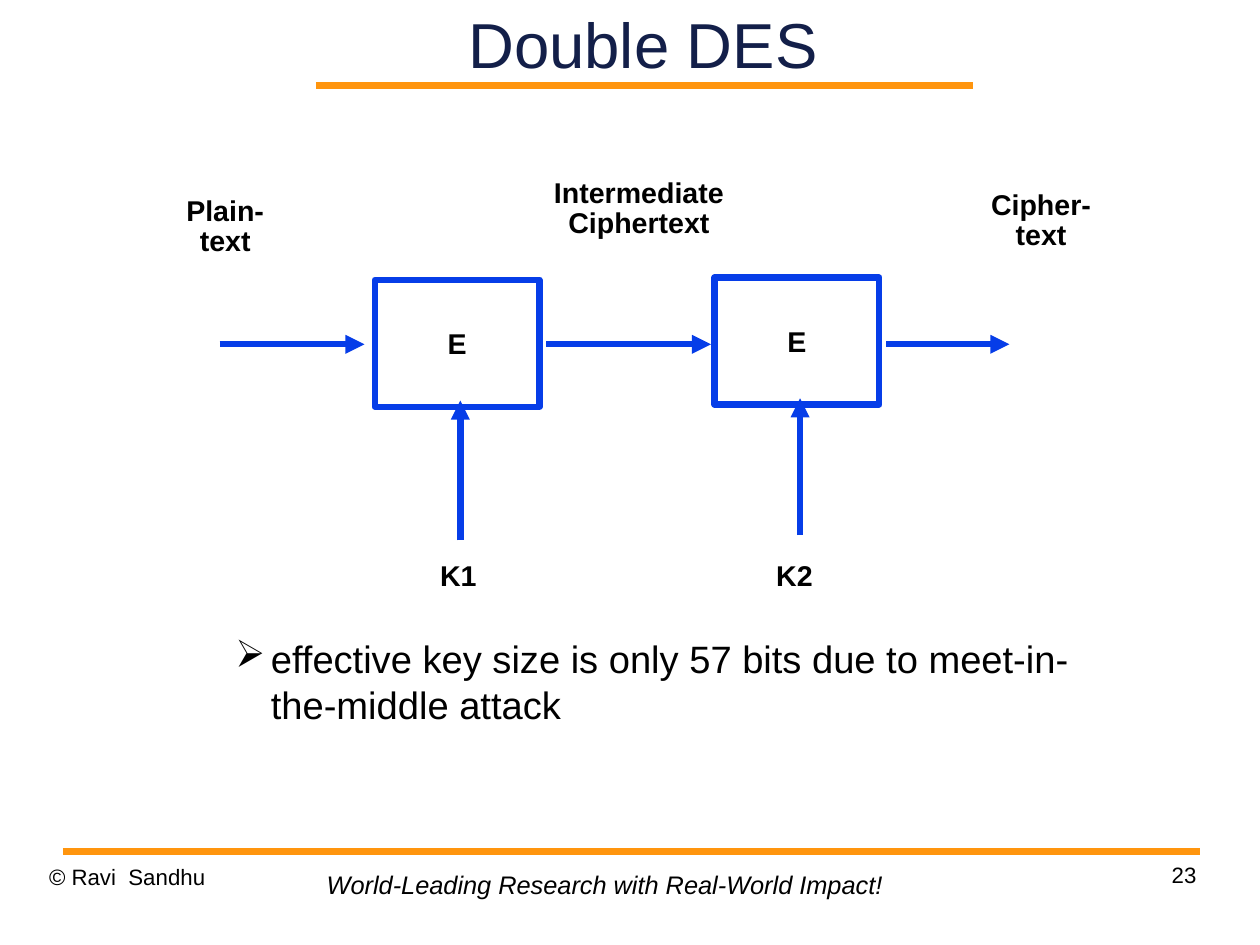
from lxml import etree
from pptx import Presentation
from pptx.dml.color import RGBColor
from pptx.enum.shapes import MSO_CONNECTOR, MSO_SHAPE
from pptx.enum.text import MSO_ANCHOR, MSO_AUTO_SIZE, PP_ALIGN
from pptx.oxml.ns import qn
from pptx.util import Cm, Pt

STRAIGHT = MSO_CONNECTOR.STRAIGHT
RECTANGLE = MSO_SHAPE.RECTANGLE
TOP, MIDDLE = MSO_ANCHOR.TOP, MSO_ANCHOR.MIDDLE
LEFT, CENTER, RIGHT = PP_ALIGN.LEFT, PP_ALIGN.CENTER, PP_ALIGN.RIGHT
FIXED, GROW = MSO_AUTO_SIZE.NONE, MSO_AUTO_SIZE.SHAPE_TO_FIT_TEXT

BLACK = RGBColor(0x00, 0x00, 0x00)
NAVY = RGBColor(0x13, 0x1F, 0x49)
BLUE = RGBColor(0x06, 0x3D, 0xE8)
ORANGE = RGBColor(0xFF, 0x95, 0x0E)

FONT = "Arial"
NO_INSETS = (0, 0, 0, 0)
BOX_INSETS = (0.25, 0.13, 0.25, 0.13)
LABEL_INSETS = (0.18, 0.08, 0.18, 0.08)
BOLD_LABEL = {"size": Pt(18), "bold": True}
LABEL_FRAME = {"insets": LABEL_INSETS, "wrap": False, "grow": GROW, "spacing": 0.87}

STAGE_WIDTH, STAGE_HEIGHT = 3.66, 2.82
STAGES = [
    {"left": 8.33, "top": 6.22, "key": "K1", "key_left": 9.6, "tail": 12.01},
    {"left": 15.88, "top": 6.17, "key": "K2", "key_left": 17.07, "tail": 11.89},
]
FLOW_TOP = 7.65
FLOWS = [(4.88, 8.1), (12.14, 15.8), (19.69, 22.43)]
LABELS = [
    (("Plain-", "text"), (3.66, 4.32, 2.69, 1.93)),
    (("Cipher-", "text"), (21.46, 4.19, 3.35, 1.93)),
    (("Intermediate", "Ciphertext"), (11.48, 3.91, 5.44, 1.93)),
]


def write_text(shape, lines, font, align=LEFT, anchor=TOP, insets=BOX_INSETS,
               wrap=True, grow=FIXED, spacing=None):
    """Fill a shape with one formatted paragraph per line."""
    frame = shape.text_frame
    margins = zip(("margin_left", "margin_top", "margin_right", "margin_bottom"), insets)
    layout = {name: Cm(length) for name, length in margins}
    layout.update(word_wrap=wrap, auto_size=grow, vertical_anchor=anchor)
    for name, value in layout.items():
        setattr(frame, name, value)
    frame.text = "\n".join(lines)
    color = font.get("color", BLACK)
    for paragraph in frame.paragraphs:
        paragraph.alignment = align
        paragraph.line_spacing = spacing
        for run in paragraph.runs:
            run.font.name = FONT
            run.font.color.rgb = color
            for name, value in font.items():
                if name != "color":
                    setattr(run.font, name, value)


def add_text(slide, box, lines, font, **layout):
    """Add a text box and return it."""
    shape = slide.shapes.add_textbox(*map(Cm, box))
    write_text(shape, lines, font, **layout)
    return shape


def add_line(slide, start, end, color, width, arrow=False):
    """Draw a straight line, with an arrowhead at its end if asked."""
    line = slide.shapes.add_connector(STRAIGHT, *map(Cm, start + end))
    line.line.color.rgb = color
    line.line.width = Pt(width)
    properties = line._element.spPr
    if arrow:
        outline = properties.find(qn("a:ln"))
        etree.SubElement(outline, qn("a:tailEnd"), type="triangle")
    etree.SubElement(properties, qn("a:effectLst"))


def add_title(slide, box):
    """Place the title and the rule below it."""
    left, top, width, height = box
    title = slide.shapes.title
    for name, value in zip(("left", "top", "width", "height"), box):
        setattr(title, name, Cm(value))
    write_text(title, ["Double DES"], {"size": Pt(40), "color": NAVY},
               align=CENTER, anchor=MIDDLE, insets=NO_INSETS)
    bottom = top + height
    add_line(slide, (left + 0.9, bottom), (left + width - 0.82, bottom), ORANGE, 4.31)


def add_stage(slide, stage):
    """Draw one encryption box with its key arrow and key label."""
    left, top = stage["left"], stage["top"]
    shape = slide.shapes.add_shape(
        RECTANGLE, Cm(left), Cm(top), Cm(STAGE_WIDTH), Cm(STAGE_HEIGHT))
    shape.shadow.inherit = False
    shape.fill.background()
    shape.line.color.rgb = BLUE
    shape.line.width = Pt(4)
    write_text(shape, ["E"], BOLD_LABEL, align=CENTER, anchor=MIDDLE, wrap=False)
    key_x = left + 1.9
    add_line(slide, (key_x, stage["tail"]), (key_x, top + 2.68), BLUE, 4, arrow=True)
    add_text(slide, (stage["key_left"], 12.42, 1.47, 1.07), [stage["key"]],
             BOLD_LABEL, **LABEL_FRAME)


def add_diagram(slide):
    """Draw the two stages, the arrows between them and their labels."""
    for stage in STAGES:
        add_stage(slide, stage)
    for start, end in FLOWS:
        add_line(slide, (start, FLOW_TOP), (end, FLOW_TOP), BLUE, 4, arrow=True)
    for lines, box in LABELS:
        add_text(slide, box, lines, BOLD_LABEL, align=CENTER, **LABEL_FRAME)


def add_conclusion(slide, box):
    """Add the bulleted remark below the diagram."""
    shape = add_text(
        slide, box,
        ["effective key size is only 57 bits due to meet-in-the-middle attack"],
        {"size": Pt(24)})
    paragraph = shape.text_frame.paragraphs[0]
    paragraph.level = 1
    properties = paragraph._p.get_or_add_pPr()
    properties.set("marL", str(Cm(2.39)))
    properties.set("indent", str(Cm(-0.79)))
    bullet_color = etree.SubElement(properties, qn("a:buClr"))
    etree.SubElement(bullet_color, qn("a:srgbClr"), val=str(BLACK))
    etree.SubElement(properties, qn("a:buChar"), char="➢")


def add_footer(slide, box):
    """Place the footer rule, copyright, motto and page number."""
    left, top, width, height = box
    right = left + width
    small = {"size": Pt(14)}
    add_line(slide, (left + 0.31, top), (right + 0.08, top), ORANGE, 4.31)
    add_text(slide, (left, top + 0.26, 6.53, height), ["© Ravi  Sandhu"],
             small, insets=NO_INSETS, spacing=1.01)
    add_text(slide, (right - 6.53, top + 0.21, 6.53, height), ["23"],
             small, align=RIGHT, insets=NO_INSETS, spacing=1.01)
    add_text(slide, (left + 5.92, top + 0.26, 12.9, 0.94),
             ["World-Leading Research with Real-World Impact!"],
             {"size": Pt(16), "italic": True}, wrap=False, grow=GROW)


def main():
    """Build and save the slide."""
    presentation = Presentation()
    presentation.slide_width = Cm(28)
    presentation.slide_height = Cm(21)
    slide = presentation.slides.add_slide(presentation.slide_layouts[5])
    add_title(slide, (6.12, 0, 16.33, 1.9))
    add_diagram(slide)
    add_conclusion(slide, (3.38, 14, 21.59, 2.74))
    add_footer(slide, (1.09, 18.92, 25.5, 1.45))
    presentation.save("out.pptx")


if __name__ == "__main__":
    main()
